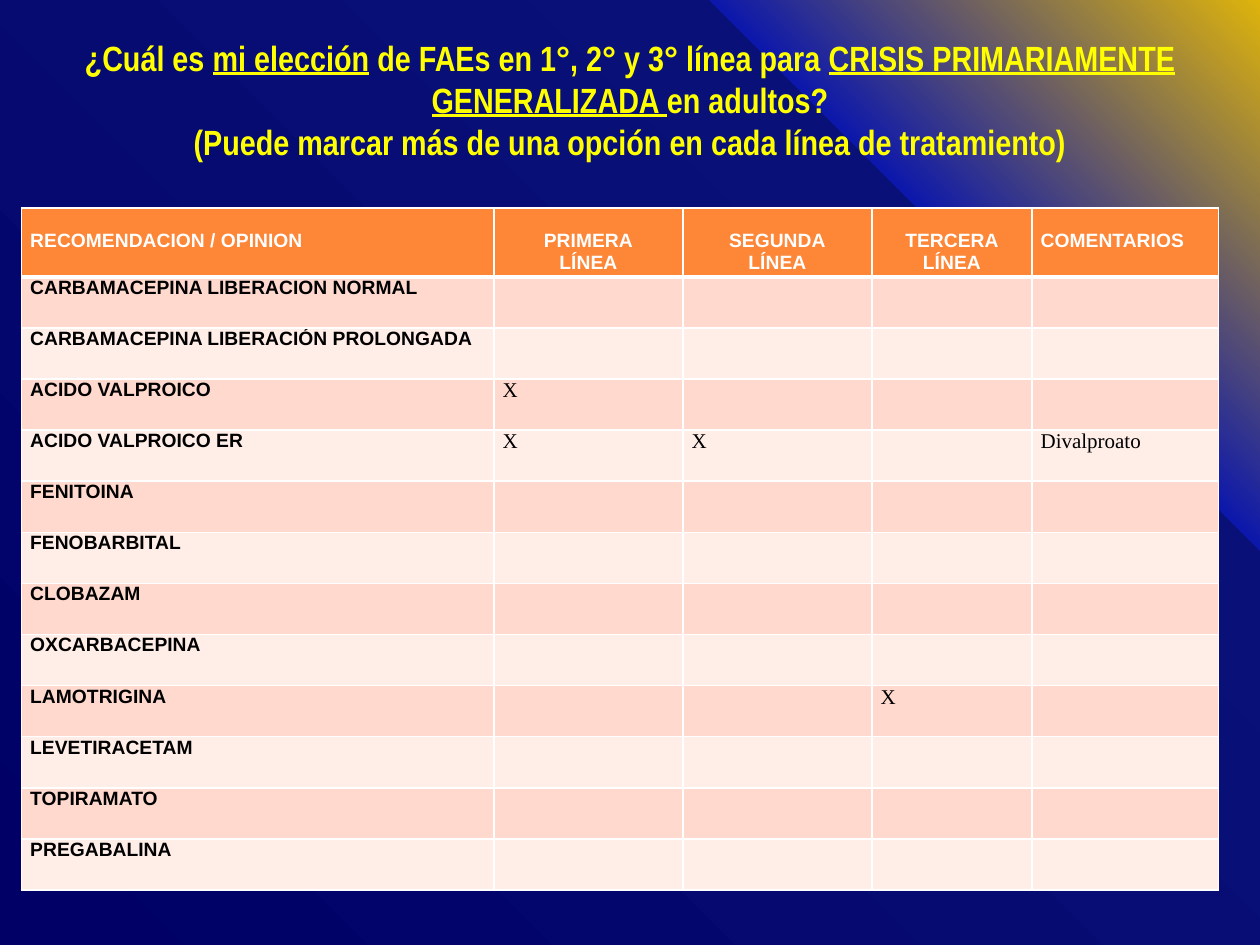
from pptx import Presentation
from pptx.dml.color import RGBColor
from pptx.enum.text import MSO_ANCHOR as Anchor, PP_ALIGN as Align
from pptx.oxml import parse_xml
from pptx.oxml.ns import nsdecls
from pptx.util import Inches, Pt

COLORS = {
    "title": "FFFF00", "header": "FE8637", "white": "FFFFFF", "black": "000000",
    "odd_row": "FFD9CE", "even_row": "FFEDE8",
}
BACKGROUND_STOPS = [(0, "000066"), (75, "091179"), (75, "0C17AC"),
                    (100, "DEB40B"), (100, "FBEAA9")]

TITLE_LINES = [
    [("¿Cuál es ", False), ("mi elección", True),
     (" de FAEs en 1°, 2° y 3° línea para ", False),
     ("CRISIS PRIMARIAMENTE GENERALIZADA ", True), ("en adultos?", False)],
    [("(Puede marcar más de una opción en cada línea de tratamiento)", False)],
]
HEADERS = ["RECOMENDACION / OPINION", "PRIMERA\nLÍNEA", "SEGUNDA\nLÍNEA",
           "TERCERA\nLÍNEA", "COMENTARIOS"]
DRUGS = ["CARBAMACEPINA LIBERACION NORMAL", "CARBAMACEPINA LIBERACIÓN PROLONGADA",
         "ACIDO VALPROICO", "ACIDO VALPROICO ER", "FENITOINA", "FENOBARBITAL",
         "CLOBAZAM", "OXCARBACEPINA", "LAMOTRIGINA", "LEVETIRACETAM",
         "TOPIRAMATO", "PREGABALINA"]
ANSWERS = {
    "ACIDO VALPROICO": ["X", "", "", ""],
    "ACIDO VALPROICO ER": ["X", "X", "", "Divalproato"],
    "LAMOTRIGINA": ["", "", "X", ""],
}
COLUMN_WIDTHS = [3.75, 1.5, 1.5, 1.27, 1.48]
HEADER_HEIGHT, TABLE_HEIGHT = 0.52, 5.39


def add_text(paragraph, text, font="Arial", size=11, color="black", bold=True,
             underline=False, align=Align.LEFT):
    paragraph.alignment = align
    run = paragraph.add_run()
    run.text = text
    run.font.name, run.font.size = font, Pt(size)
    run.font.bold, run.font.underline = bold, underline
    run.font.color.rgb = RGBColor.from_string(COLORS[color])


class SlideBuilder:
    label = {"font": "Arial", "size": 11, "bold": True}
    answer = {"font": "Times New Roman", "size": 12, "bold": False}
    heading = {"font": "Arial Narrow", "size": 20, "color": "title", "align": Align.CENTER}

    def __init__(self, slide):
        self.slide = slide

    def background(self, stops):
        """Radial gradient spreading from the bottom left corner."""
        stop_xml = "".join(f'<a:gs pos="{percent * 1000}"><a:srgbClr val="{color}"/></a:gs>'
                           for percent, color in stops)
        self.slide.element.cSld.insert(0, parse_xml(
            f'<p:bg {nsdecls("p", "a")}><p:bgPr><a:gradFill rotWithShape="0">'
            f'<a:gsLst>{stop_xml}</a:gsLst><a:path path="circle">'
            '<a:fillToRect l="0" t="100000" r="100000" b="0"/></a:path>'
            '</a:gradFill><a:effectLst/></p:bgPr></p:bg>'))

    def title(self, lines, left, top, width, height):
        frame = self.slide.shapes.add_textbox(
            Inches(left), Inches(top), Inches(width), Inches(height)).text_frame
        frame.word_wrap = True
        frame.vertical_anchor = Anchor.MIDDLE
        paragraph = frame.paragraphs[0]
        for number, line in enumerate(lines):
            if number:
                paragraph.add_line_break()
            for text, underline in line:
                add_text(paragraph, text, underline=underline, **self.heading)

    def table(self, left, top):
        shape = self.slide.shapes.add_table(
            len(DRUGS) + 1, len(HEADERS), Inches(left), Inches(top),
            Inches(sum(COLUMN_WIDTHS)), Inches(TABLE_HEIGHT))
        table = shape.table
        table.horz_banding = False
        for column, width in zip(table.columns, COLUMN_WIDTHS):
            column.width = Inches(width)
        for row in table.rows:
            row.height = Inches((TABLE_HEIGHT - HEADER_HEIGHT) / len(DRUGS))
        table.rows[0].height = Inches(HEADER_HEIGHT)

        for column, text in enumerate(HEADERS):
            align = Align.CENTER if 0 < column < len(HEADERS) - 1 else Align.LEFT
            self.cell(table.cell(0, column), text, "header", margin_top=0.18,
                      bottom_border=3, color="white", align=align, **self.label)
        for row, drug in enumerate(DRUGS, start=1):
            fill = "odd_row" if row % 2 else "even_row"
            self.cell(table.cell(row, 0), drug, fill, **self.label)
            for column, text in enumerate(ANSWERS.get(drug, [""] * 4), start=1):
                self.cell(table.cell(row, column), text, fill, **self.answer)

    def cell(self, cell, text, fill, margin_top=0, bottom_border=1, **text_format):
        cell.margin_left = cell.margin_right = Inches(0.07)
        cell.margin_top, cell.margin_bottom = Inches(margin_top), 0
        self.borders(cell, {"L": 1, "R": 1, "T": 1, "B": bottom_border})
        cell.fill.solid()
        cell.fill.fore_color.rgb = RGBColor.from_string(COLORS[fill])
        frame = cell.text_frame
        for number, line in enumerate(text.split("\n") if text else []):
            paragraph = frame.add_paragraph() if number else frame.paragraphs[0]
            add_text(paragraph, line, **text_format)

    def borders(self, cell, widths):
        properties = cell._tc.get_or_add_tcPr()
        for side, width in widths.items():
            properties.append(parse_xml(
                f'<a:ln{side} {nsdecls("a")} w="{Pt(width)}"><a:solidFill>'
                f'<a:srgbClr val="{COLORS["white"]}"/></a:solidFill></a:ln{side}>'))


def main():
    deck = Presentation()
    deck.slide_width, deck.slide_height = Inches(10), Inches(7.5)
    builder = SlideBuilder(deck.slides.add_slide(deck.slide_layouts[6]))
    builder.background(BACKGROUND_STOPS)
    builder.title(TITLE_LINES, 0, 0, 10, 1.58)
    builder.table(0.17, 1.65)
    deck.save("out.pptx")


if __name__ == "__main__":
    main()
